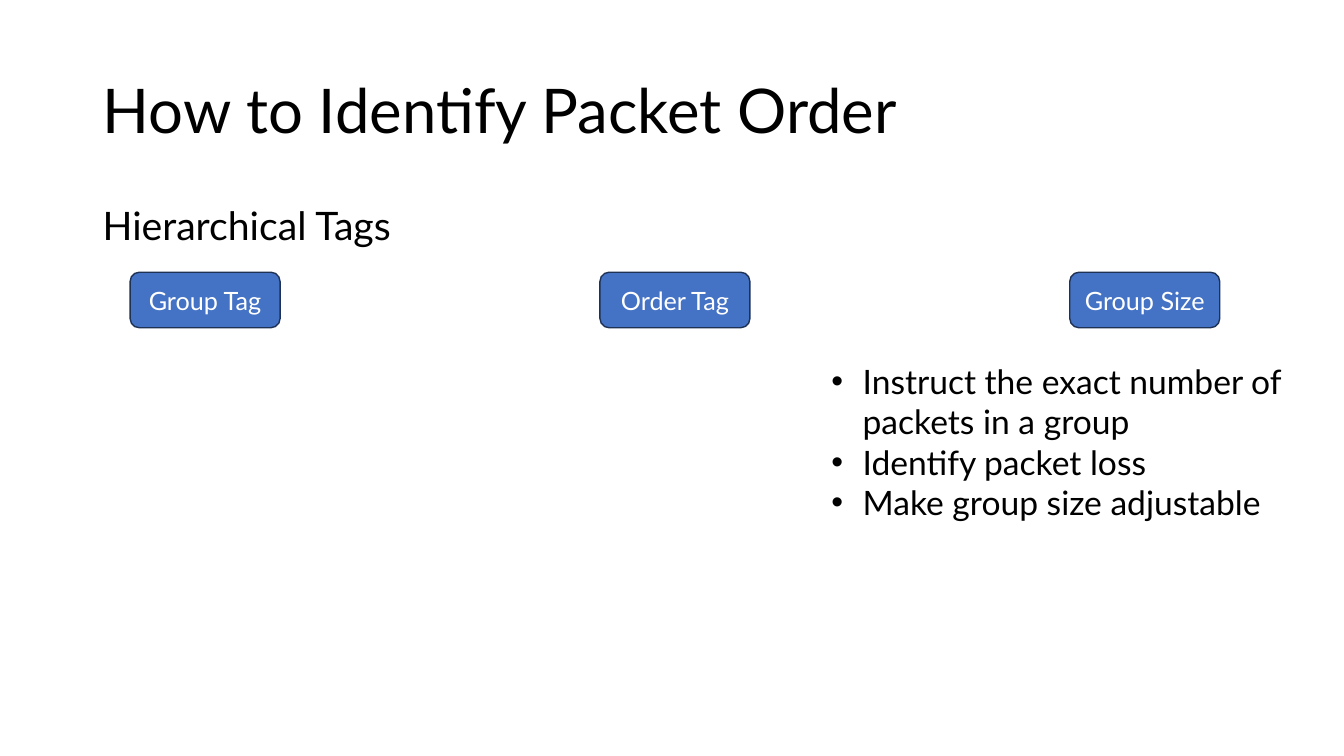
"""Build the slide on identifying packet order with hierarchical tags."""
import pptx
import pptx.dml.color
import pptx.enum.shapes
import pptx.enum.text
import pptx.util
from lxml import etree

Cm = pptx.util.Cm
Pt = pptx.util.Pt
ANCHOR = pptx.enum.text.MSO_ANCHOR
ALIGN = pptx.enum.text.PP_ALIGN
COLOURS = {"text": "000000", "tag": "4472C4", "tag_edge": "1E3256", "tag_text": "FFFFFF"}
NAMESPACE = "http://schemas.openxmlformats.org/drawingml/2006/main"

TAGS = ["Group Tag", "Order Tag", "Group Size"]
SIZE_NOTES = [
    "Instruct the exact number of packets in a group",
    "Identify packet loss",
    "Make group size adjustable",
]


def colour(key):
    return pptx.dml.color.RGBColor.from_string(COLOURS[key])


def apply(target, formats):
    for attribute, value in formats.items():
        setattr(target, attribute, value)


def write(frame, lines, size, ink="text", anchor=ANCHOR.TOP, **paragraph_formats):
    apply(frame, {"word_wrap": True, "vertical_anchor": anchor})
    for index, line in enumerate(lines):
        paragraph = frame.add_paragraph() if index else frame.paragraphs[0]
        apply(paragraph, paragraph_formats)
        run = paragraph.add_run()
        run.text = line
        apply(run.font, {"name": "Lato", "size": Pt(size)})
        run.font.color.rgb = colour(ink)


def add_text(slide, box, lines, size, **formats):
    frame = slide.shapes.add_textbox(*map(Cm, box)).text_frame
    write(frame, lines, size, **formats)
    return frame


def add_bullets(frame):
    for paragraph in frame.paragraphs:
        properties = paragraph._p.get_or_add_pPr()
        properties.set("marL", str(Cm(0.79)))
        properties.set("indent", str(-Cm(0.79)))
        etree.SubElement(properties, f"{{{NAMESPACE}}}buFont", typeface="Arial")
        etree.SubElement(properties, f"{{{NAMESPACE}}}buChar", char="•")


def add_tag(slide, left, label):
    tag = slide.shapes.add_shape(
        pptx.enum.shapes.MSO_SHAPE.ROUNDED_RECTANGLE, Cm(left), Cm(6.86), Cm(3.78), Cm(1.4)
    )
    tag.shadow.inherit = False
    tag.fill.solid()
    tag.fill.fore_color.rgb = colour("tag")
    tag.line.color.rgb = colour("tag_edge")
    tag.line.width = Pt(1)
    write(tag.text_frame, [label], 18, "tag_text", ANCHOR.MIDDLE, alignment=ALIGN.CENTER)


def main():
    deck = pptx.Presentation()
    apply(deck, {"slide_width": Cm(33.87), "slide_height": Cm(19.05)})
    slide = deck.slides.add_slide(deck.slide_layouts[6])

    add_text(slide, (2.34, 1.02, 29.95, 3.68), ["How to Identify Packet Order"], 44,
             anchor=ANCHOR.MIDDLE, line_spacing=0.9)
    add_text(slide, (2.34, 5.08, 29.95, 12.09), ["Hierarchical Tags"], 28,
             line_spacing=0.9, space_before=Pt(10))
    for position, label in enumerate(TAGS):
        add_tag(slide, 3.28 + position * 11.84, label)
    size_notes = add_text(slide, (20.7, 8.97, 12.12, 4.37), SIZE_NOTES, 24)
    add_bullets(size_notes)

    deck.save("out.pptx")


if __name__ == "__main__":
    main()
